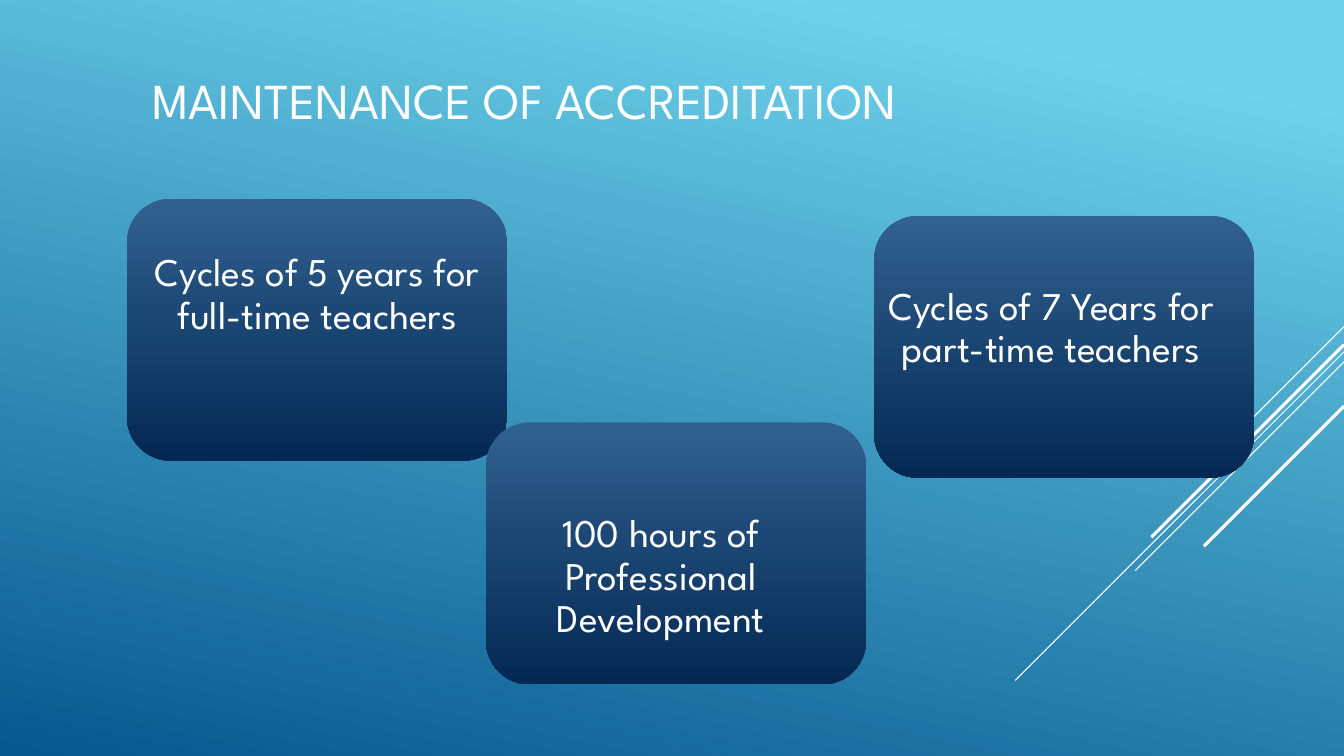
from dataclasses import dataclass

from lxml.etree import SubElement
from pptx import Presentation
from pptx.dml.color import RGBColor as Rgb
from pptx.enum.shapes import MSO_CONNECTOR as Conn, MSO_SHAPE as Kind
from pptx.enum.text import MSO_ANCHOR as Anchor, PP_ALIGN as Align
from pptx.oxml.ns import qn
from pptx.util import Pt

PX = 9144  # 100 px to the inch


@dataclass(frozen=True)
class Theme:
    font: str = "League Spartan"
    white: str = "FFFFFF"
    back: tuple = ((0.1, "6ED2EB"), (1, "06588E"))
    card: tuple = ((0, "316190"), (1, "042853"))
    title: int = 36
    body: int = 28
    thin: float = 0.75
    thick: float = 2.25


look = Theme()


def shade(fill, stops, angle):
    fill.gradient()
    fill.gradient_angle = angle
    for stop, (pos, color) in zip(fill.gradient_stops, stops):
        stop.position = pos
        stop.color.rgb = Rgb.from_string(color)


def write(frame, text, size, align, anchor):
    frame.word_wrap = True
    frame.vertical_anchor = anchor
    frame.text = text
    para = frame.paragraphs[0]
    para.alignment = align
    para.line_spacing = 0.9
    font = para.runs[0].font
    font.name, font.size = look.font, Pt(size)
    font.color.rgb = Rgb.from_string(look.white)


# Slide and background
deck = Presentation()
deck.slide_width, deck.slide_height = 1333 * PX, 750 * PX
slide = deck.slides.add_slide(deck.slide_layouts[5])
shapes = slide.shapes
shade(slide.background.fill, look.back, 258)

# Diagonal lines from the right edge: top, run, weight
edge = 1333
rays = [
    (324, 100, look.thin),
    (349, 326, look.thin),
    (359, 207, look.thin),
    (342, 191, look.thick),
    (403, 139, look.thick),
]
for top, run, weight in rays:
    ray = shapes.add_connector(
        Conn.STRAIGHT, edge * PX, top * PX, (edge - run) * PX, (top + run) * PX)
    ray.line.color.rgb = Rgb.from_string(look.white)
    ray.line.width = Pt(weight)
    SubElement(ray._element.spPr, qn("a:effectLst"))

# Title
title = shapes.title
title.left, title.top = 141 * PX, 20 * PX
title.width, title.height = 933 * PX, 165 * PX
write(title.text_frame, "MAINTENANCE OF ACCREDITATION", look.title,
      Align.LEFT, Anchor.MIDDLE)

# Cards: left, top, then the label's shift from the card
wide, high, pad = 377, 260, 22
cards = [
    ("Cycles of 5 years for full-time teachers", 126, 197, 0, 32),
    ("Cycles of 7 Years for part-time teachers", 867, 214, -13, 48),
    ("100 hours of Professional Development", 482, 419, -15, 69),
]
for text, left, top, dx, dy in cards:
    card = shapes.add_shape(
        Kind.ROUNDED_RECTANGLE, left * PX, top * PX, wide * PX, high * PX)
    card.shadow.inherit = False
    card.line.fill.background()
    shade(card.fill, look.card, 270)

    label = shapes.add_textbox(
        (left + dx) * PX, (top + dy) * PX, wide * PX, 140 * PX)
    frame = label.text_frame
    frame.margin_left = frame.margin_right = frame.margin_top = pad * PX
    frame.margin_bottom = 0
    write(frame, text, look.body, Align.CENTER, Anchor.TOP)

deck.save("out.pptx")
